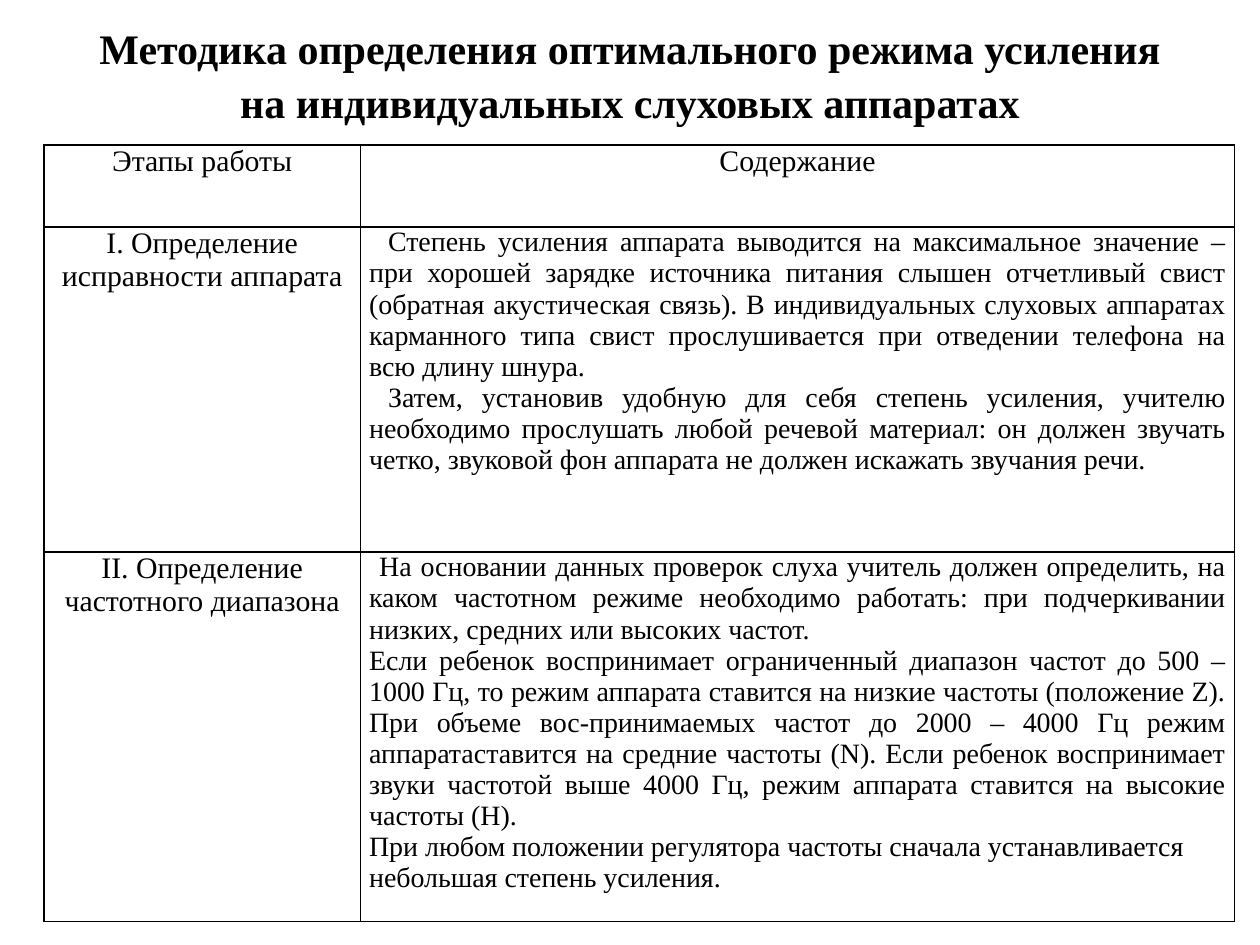
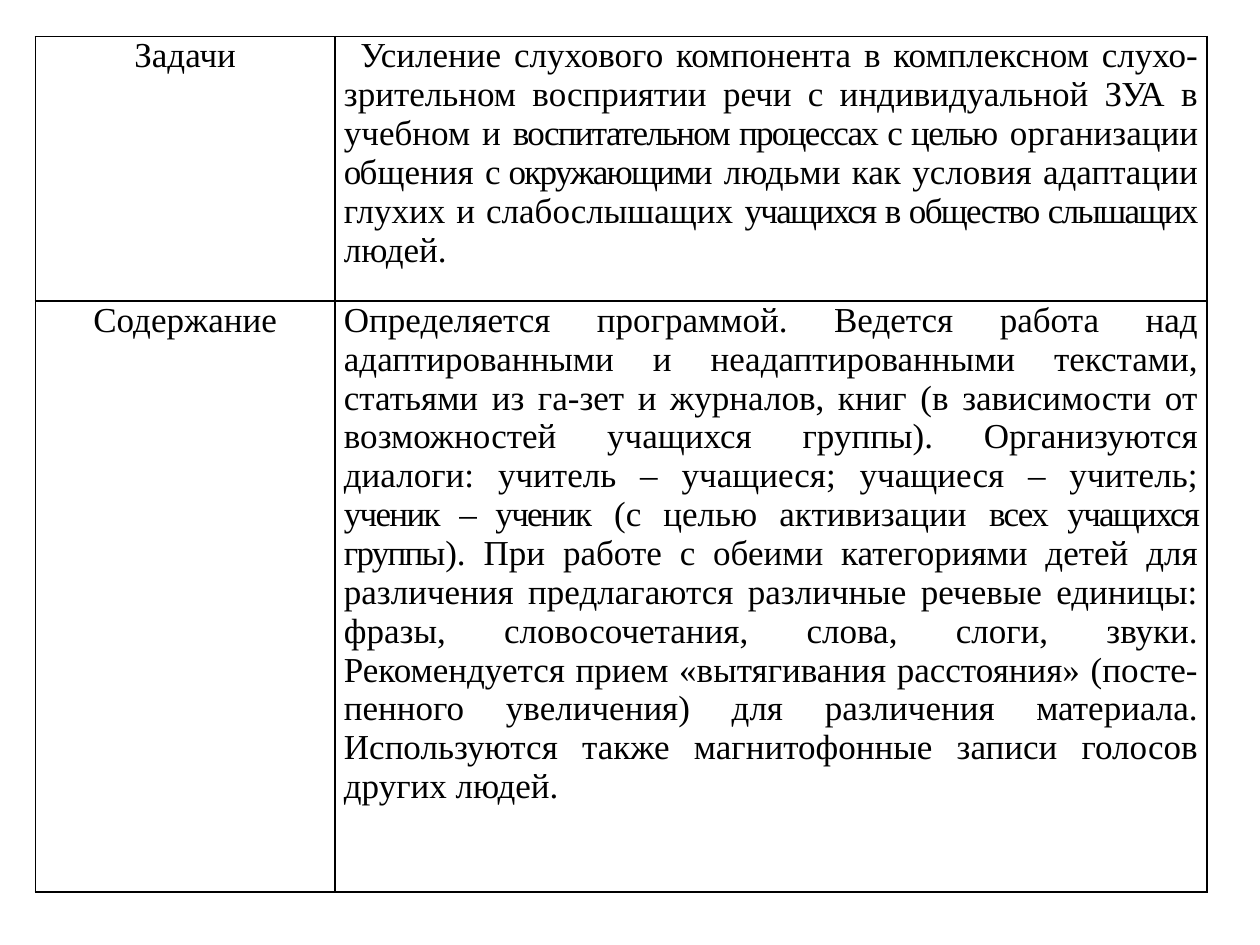
"""Build two slides on tuning personal hearing aids."""
from dataclasses import dataclass

from lxml import etree
from pptx import Presentation
from pptx import util as u
from pptx.dml import color
from pptx.enum import text
from pptx.oxml import ns

FONT = "Times New Roman"
HUES = {"ink": "000000"}
INK = color.RGBColor.from_string(HUES["ink"])
MID, FULL, LEFT = text.PP_ALIGN.CENTER, text.PP_ALIGN.JUSTIFY, text.PP_ALIGN.LEFT
EDGES = ("a:lnL", "a:lnR", "a:lnT", "a:lnB")


@dataclass(frozen=True)
class Para:
    words: tuple[str, ...]
    align: text.PP_ALIGN = FULL
    size: float = 16
    dent: float = 0
    bold: bool = False


@dataclass(frozen=True)
class Row:
    high: float
    label: str
    paras: tuple[Para, ...]


@dataclass(frozen=True)
class Grid:
    left: float
    top: float
    cols: tuple[float, ...]
    size: float
    rows: tuple[Row, ...]


TITLE = Para(("Методика определения оптимального режима усиления на индивидуальных слуховых аппаратах",),
             MID, 24, bold=True)

STAGES = Grid(0.35, 1.15, (2.51, 6.94), 17, (
    Row(0.65, "Этапы работы", (Para(("Содержание",), MID, 17),)),
    Row(2.58, "I. Определение исправности аппарата", (
        Para(("Степень усиления аппарата выводится на максимальное значение – при хорошей зарядке "
              "источника питания слышен отчетливый свист (обратная акустическая связь). "
              "В индивидуальных слуховых аппаратах карманного типа свист прослушивается "
              "при отведении телефона на всю длину шнура.",), dent=0.15),
        Para(("Затем, установив удобную для себя степень усиления, учителю необходимо прослушать "
              "любой речевой материал: он должен звучать четко, звуковой фон аппарата не должен "
              "искажать звучания речи.",), dent=0.15),
    )),
    Row(2.66, "II. Определение частотного диапазона", (
        Para(("На основании данных проверок слуха учитель должен определить, на каком частотном "
              "режиме необходимо работать: при подчеркивании низких, средних или высоких частот.",),
             dent=0.08),
        Para(("Если ребенок воспринимает ограниченный диапазон частот до 500 – 1000 Гц, то режим "
              "аппарата ставится на низкие частоты (положение Z). При объеме вос-принимаемых частот "
              "до 2000 – 4000 Гц режим аппаратаставится на средние частоты (N). Если ребенок "
              "воспринимает звуки частотой выше 4000 Гц, режим аппарата ставится на высокие "
              "частоты (H).",)),
        Para(("При любом положении регулятора частоты сначала устанавливается небольшая "
              "степень усиления.",), LEFT),
    )),
))

GOALS = Grid(0.28, 0.29, (2.38, 6.92), 20, (
    Row(2.1, "Задачи", (
        Para(("Усиление слухового компонента в комплексном слухо-зрительном восприятии речи "
              "с индивидуальной ЗУА в учебном и ", "воспитательном процессах с целью",
              " организации ", "об", "щения ", "с окружающими",
              " людьми как условия адаптации глухих и слабослышащих ",
              "учащихся в общество слышащих", " людей."), size=20, dent=0.13),
    )),
    Row(4.69, "Содержание", (
        Para(("Определяется программой. Ведется работа над адаптированными и неадаптированными "
              "текстами, статьями из га-зет и журналов, книг (в зависимости от возможностей "
              "учащихся группы). Организуются диалоги: учитель – учащиеся; учащиеся – учитель; ",
              "ученик – ученик", " (с целью активизации ", "всех учащихся группы",
              "). При работе с обеими категориями детей для различения предлагаются различные "
              "речевые единицы: фразы, словосочетания, слова, слоги, звуки. Рекомендуется прием "
              "«вытягивания расстояния» (посте-пенного увеличения) для различения материала. "
              "Используются также магнитофонные записи голосов других людей."), size=20),
    )),
))


def write(frame, paras: tuple[Para, ...]) -> None:
    """Fill a text frame; every second piece of a paragraph is set tight."""
    for spot, para in enumerate(paras):
        line = frame.add_paragraph() if spot else frame.paragraphs[0]
        line.alignment = para.align
        if para.dent:
            props = line._p.get_or_add_pPr()
            props.set("marL", "0")
            props.set("indent", str(u.Inches(para.dent)))
        for turn, piece in enumerate(para.words):
            run = line.add_run()
            run.text = piece
            font = run.font
            font.name, font.size, font.bold = FONT, u.Pt(para.size), para.bold
            font.color.rgb = INK
            if turn % 2:
                run._r.get_or_add_rPr().set("spc", "-100")


def style(cell) -> None:
    """Set the margins, the borders and the empty fill of a cell."""
    cell.margin_left = cell.margin_right = u.Inches(0.07)
    cell.margin_top = cell.margin_bottom = 0
    props = cell._tc.get_or_add_tcPr()
    for edge in EDGES:
        line = etree.SubElement(props, ns.qn(edge), w=str(u.Pt(1)))
        fill = etree.SubElement(line, ns.qn("a:solidFill"))
        etree.SubElement(fill, ns.qn("a:srgbClr"), val=HUES["ink"])
    cell.fill.background()


def draw(slide, grid: Grid) -> None:
    """Draw a table of labels and their text."""
    wide, high = sum(grid.cols), sum(row.high for row in grid.rows)
    table = slide.shapes.add_table(
        len(grid.rows), len(grid.cols),
        *map(u.Inches, (grid.left, grid.top, wide, high))).table
    table.first_row = table.horz_banding = False
    for col, width in zip(table.columns, grid.cols):
        col.width = u.Inches(width)
    for line, row in zip(table.rows, grid.rows):
        line.height = u.Inches(row.high)
        label = Para((row.label,), MID, grid.size)
        for cell, paras in zip(line.cells, ((label,), row.paras)):
            style(cell)
            write(cell.text_frame, paras)


def head(slide, para: Para) -> None:
    """Draw the slide title."""
    box = slide.shapes.add_textbox(*map(u.Inches, (0.5, 0, 9, 1.15)))
    frame = box.text_frame
    frame.word_wrap = True
    frame.vertical_anchor = text.MSO_ANCHOR.MIDDLE
    write(frame, (para,))
    frame.paragraphs[0].line_spacing = 1.07


def main() -> None:
    """Build and save the deck."""
    deck = Presentation()
    deck.slide_width, deck.slide_height = u.Inches(10), u.Inches(7.5)
    blank = deck.slide_layouts[6]
    first, second = (deck.slides.add_slide(blank) for _ in range(2))
    head(first, TITLE)
    draw(first, STAGES)
    draw(second, GOALS)
    deck.save("out.pptx")


if __name__ == "__main__":
    main()
